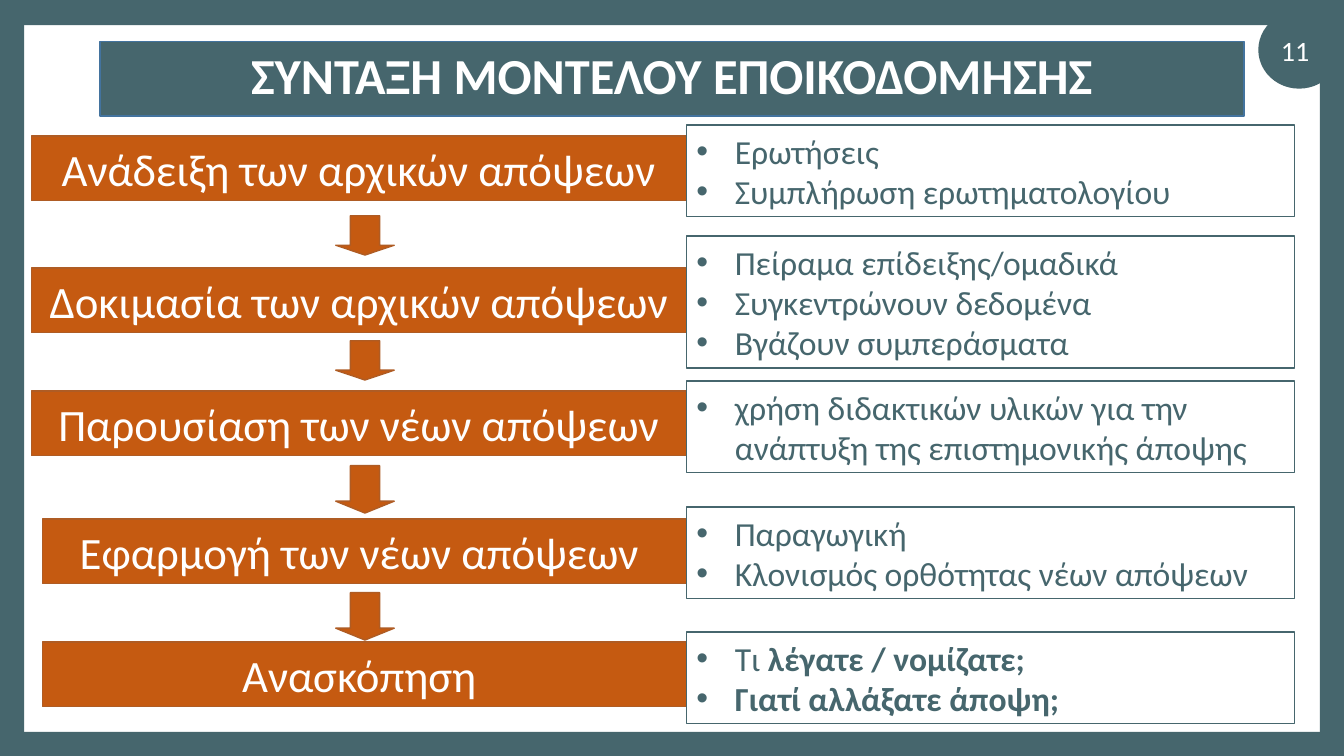
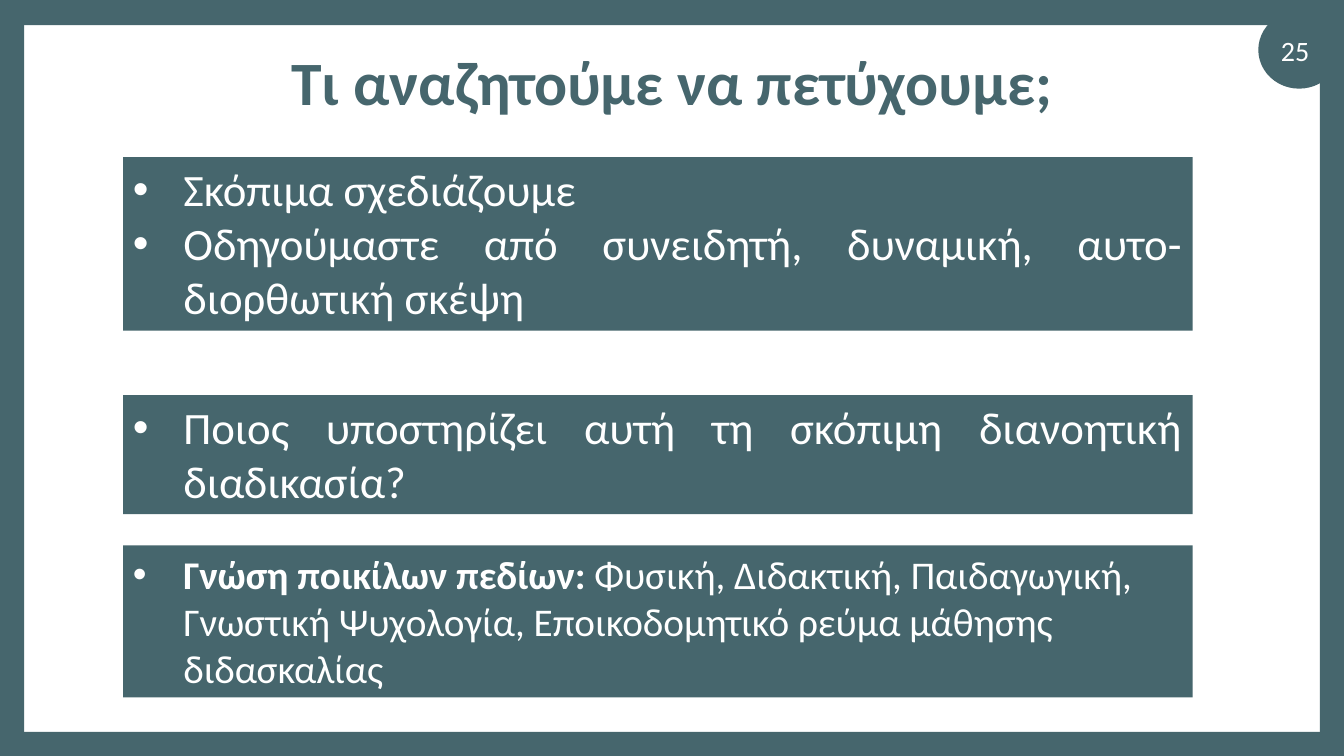
from lxml import etree
from pptx import Presentation
from pptx.dml.color import RGBColor
from pptx.enum.shapes import MSO_SHAPE
from pptx.enum.text import MSO_ANCHOR, MSO_AUTO_SIZE, PP_ALIGN
from pptx.oxml.ns import qn
from pptx.util import Inches, Pt

WIDTH, HEIGHT = 13.33, 7.5
BAND = 0.24
TEAL, ORANGE, WHITE = "46666D", "C55A11", "FFFFFF"
ORANGE_EDGE, BLUE_EDGE = "AF5C24", "43739E"
FONT = "Calibri"

# A paragraph is a list of (text, bold) runs.
STEPS_TITLE = "ΣΥΝΤΑΞΗ ΜΟΝΤΕΛΟΥ ΕΠΟΙΚΟΔΟΜΗΣΗΣ"
# label, left, top, note top, note lines, note paragraphs
STEPS = [
    ("Ανάδειξη των αρχικών απόψεων", 0.31, 1.35, 1.24, 2,
     [[("Ερωτήσεις", False)], [("Συμπλήρωση ερωτηματολογίου", False)]]),
    ("Δοκιμασία των αρχικών απόψεων", 0.31, 2.66, 2.34, 3,
     [[("Πείραμα επίδειξης/ομαδικά", False)], [("Συγκεντρώνουν δεδομένα", False)],
      [("Βγάζουν συμπεράσματα", False)]]),
    ("Παρουσίαση των νέων απόψεων", 0.31, 3.88, 3.78, 2,
     [[("χρήση διδακτικών υλικών για την ανάπτυξη της επιστημονικής άποψης", False)]]),
    ("Εφαρμογή των νέων απόψεων ", 0.42, 5.15, 5.03, 2,
     [[("Παραγωγική", False)], [("Κλονισμός ορθότητας νέων απόψεων", False)]]),
    ("Ανασκόπηση ", 0.42, 6.37, 6.27, 2,
     [[("Τι ", False), ("λέγατε / νομίζατε;", True)], [("Γιατί αλλάξατε άποψη;", True)]]),
]
ARROWS = [(2.14, 0.39), (3.38, 0.39), (4.62, 0.47), (5.88, 0.47)]  # top, height
STEP_RIGHT, STEP_HEIGHT = 6.81, 0.64
NOTE_WIDTH, NOTE_LINE, NOTE_PADDING = 6.03, 0.4, 0.11

GOALS_TITLE = "Τι αναζητούμε να πετύχουμε;"
# top, height, size, alignment, paragraphs
GOALS = [
    (1.56, 1.72, 32, PP_ALIGN.JUSTIFY,
     [[("Σκόπιμα σχεδιάζουμε", False)],
      [("Οδηγούμαστε από συνειδητή, δυναμική, αυτο-διορθωτική σκέψη", False)]]),
    (3.92, 1.18, 32, PP_ALIGN.JUSTIFY,
     [[("Ποιος υποστηρίζει αυτή τη σκόπιμη διανοητική διαδικασία?", False)]]),
    (5.41, 1.51, 28, PP_ALIGN.LEFT,
     [[("Γνώση ποικίλων πεδίων: ", True),
       ("Φυσική, Διδακτική, Παιδαγωγική, Γνωστική Ψυχολογία, "
        "Εποικοδομητικό ρεύμα μάθησης διδασκαλίας", False)]]),
]


def color(hex_code):
    return RGBColor.from_string(hex_code)


def paint(shape, fill=None, edge=None):
    if fill:
        shape.fill.solid()
        shape.fill.fore_color.rgb = color(fill)
    else:
        shape.fill.background()
    if edge:
        shape.line.color.rgb = color(edge)
        shape.line.width = Pt(1)
    else:
        shape.line.fill.background()


def add_shape(slide, kind, box, fill=None, edge=None):
    shape = slide.shapes.add_shape(kind, *map(Inches, box))
    shape.shadow.inherit = False
    paint(shape, fill, edge)
    return shape


def add_bullet(paragraph, indent):
    properties = paragraph._p.get_or_add_pPr()
    properties.set("marL", str(Inches(indent)))
    properties.set("indent", str(-Inches(indent)))
    etree.SubElement(properties, qn("a:buFont")).set("typeface", "Arial")
    etree.SubElement(properties, qn("a:buChar")).set("char", "•")


def write(shape, paragraphs, size, ink, align=PP_ALIGN.CENTER, indent=None,
          anchor=MSO_ANCHOR.MIDDLE):
    frame = shape.text_frame
    frame.word_wrap = True
    frame.auto_size = MSO_AUTO_SIZE.NONE
    frame.vertical_anchor = anchor
    for index, runs in enumerate(paragraphs):
        paragraph = frame.add_paragraph() if index else frame.paragraphs[0]
        paragraph.alignment = align
        if indent:
            add_bullet(paragraph, indent)
        paragraph.font.name = FONT
        paragraph.font.size = Pt(size)
        paragraph.font.color.rgb = color(ink)
        for text, bold in runs:
            run = paragraph.add_run()
            run.text = text
            run.font.bold = bold


def add_slide(presentation, number, title, box, size, ink, fill=None, edge=None):
    """Add a slide with the teal frame, the number badge and its title."""
    slide = presentation.slides.add_slide(presentation.slide_layouts[5])
    add_shape(slide, MSO_SHAPE.OVAL, (12.48, 0.11, 0.81, 0.77), TEAL)
    for band in ((0, 0, WIDTH, BAND + 0.01), (0, HEIGHT - BAND, WIDTH, BAND),
                 (0, 0, BAND, HEIGHT), (WIDTH - BAND, 0, BAND, HEIGHT)):
        add_shape(slide, MSO_SHAPE.RECTANGLE, band, TEAL)
    badge = slide.shapes.add_textbox(*map(Inches, (12.44, 0.3, 0.81, 0.4)))
    write(badge, [[(str(number), False)]], 20, WHITE)

    heading = slide.shapes.title
    heading.left, heading.top, heading.width, heading.height = map(Inches, box)
    paint(heading, fill, edge)
    write(heading, [[(title, True)]], size, ink)
    heading.text_frame.paragraphs[0].line_spacing = 0.9
    return slide


def build_steps(presentation):
    slide = add_slide(presentation, 11, STEPS_TITLE, (0.99, 0.41, 11.35, 0.74),
                      36, WHITE, TEAL, BLUE_EDGE)
    for label, left, top, note_top, lines, notes in STEPS:
        step = add_shape(slide, MSO_SHAPE.RECTANGLE,
                         (left, top, STEP_RIGHT - left, STEP_HEIGHT), ORANGE, ORANGE_EDGE)
        write(step, [[(label, False)]], 32, WHITE)
        note = add_shape(slide, MSO_SHAPE.RECTANGLE,
                         (STEP_RIGHT, note_top, NOTE_WIDTH, lines * NOTE_LINE + NOTE_PADDING),
                         edge=TEAL)
        write(note, notes, 24, TEAL, PP_ALIGN.LEFT, indent=0.38)
    for top, height in ARROWS:
        arrow = add_shape(slide, MSO_SHAPE.DOWN_ARROW, (3.33, top, 0.58, height),
                          ORANGE, ORANGE_EDGE)
        arrow.adjustments[1] = 0.25


def build_goals(presentation):
    slide = add_slide(presentation, 25, GOALS_TITLE, (0.92, 0.4, 11.5, 0.89), 44, TEAL)
    for top, height, size, align, paragraphs in GOALS:
        panel = add_shape(slide, MSO_SHAPE.RECTANGLE, (1.22, top, 10.61, height), TEAL)
        write(panel, paragraphs, size, WHITE, align, indent=0.5, anchor=MSO_ANCHOR.TOP)


def main():
    presentation = Presentation()
    presentation.slide_width = Inches(WIDTH)
    presentation.slide_height = Inches(HEIGHT)
    build_steps(presentation)
    build_goals(presentation)
    presentation.save("out.pptx")


if __name__ == "__main__":
    main()
